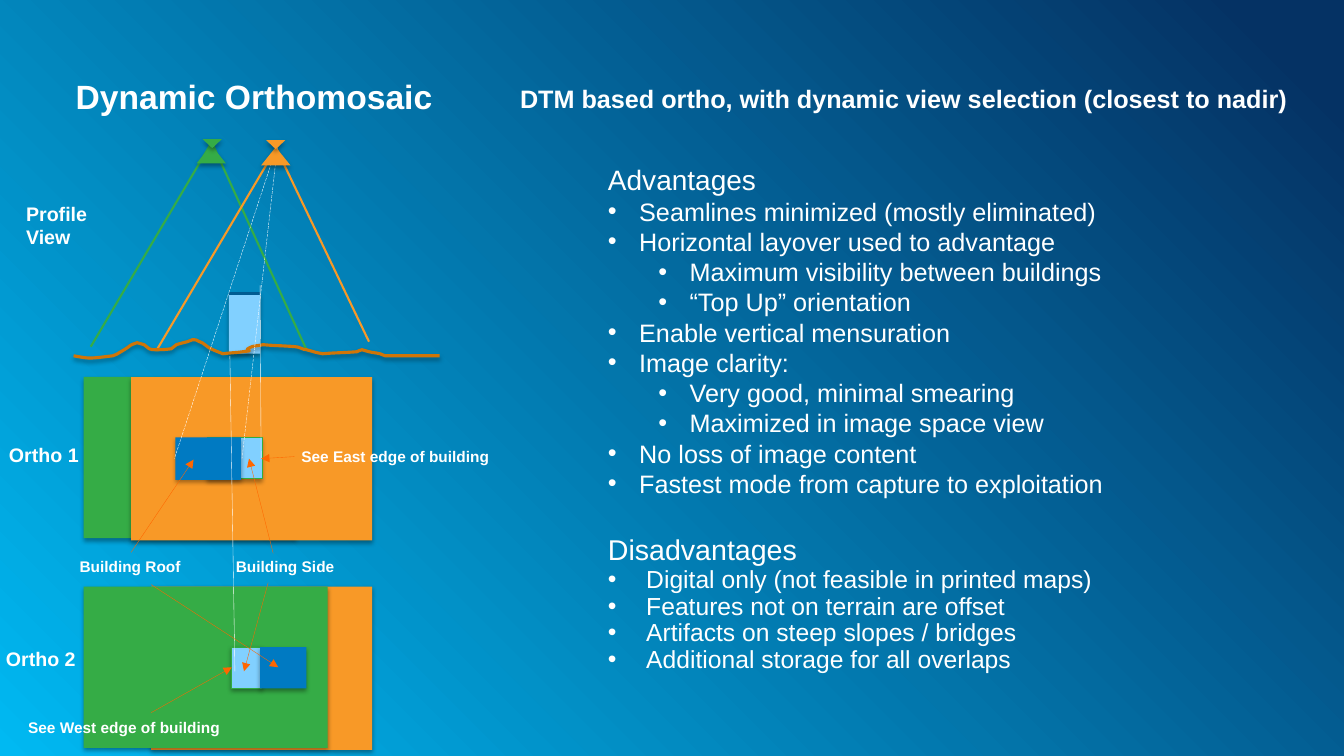
from pptx import Presentation
from pptx.dml.color import RGBColor
from pptx.enum.dml import MSO_LINE
from pptx.enum.shapes import MSO_CONNECTOR, MSO_SHAPE
from pptx.enum.text import MSO_ANCHOR, MSO_AUTO_SIZE as AUTO_SIZE, PP_ALIGN
from pptx.oxml import parse_xml
from pptx.oxml.ns import nsdecls, qn
from pptx.util import Inches, Pt

GREEN, ORANGE, WHITE = "35AC46", "F89927", "FFFFFF"
ROOF, WALL, WALL_EDGE = "007AC2", "81D0FF", "31AB42"
ROOF_EDGE, EARTH, POINTER = "005C92", "D07507", "FF6600"
NEAR_BG, FAR_BG = "00B9F2", "053264"
FONT = "Arial"

TITLE = "Dynamic Orthomosaic"
# text, left, top, width, height, size
LABELS = [
    ("DTM based ortho, with dynamic view selection (closest to nadir)", 5.06, 0.78, 8.07, 0.4, 18),
    ("Profile\nView", 0.16, 1.95, 0.81, 0.57, 14),
    ("Ortho 1", -0.01, 4.34, 0.9, 0.57, 14),
    ("Ortho 2", -0.04, 6.37, 0.9, 0.57, 14),
    ("Building Side", 2.24, 5.48, 1.19, 0.29, 11),
    ("Building Roof", 0.69, 5.48, 1.21, 0.29, 11),
    ("See East edge of building", 2.89, 4.39, 2.08, 0.29, 11),
    ("See West edge of building", 0.18, 7.07, 2.12, 0.29, 11),
]
# level, text
ADVANTAGES = [
    (0, "Seamlines minimized (mostly eliminated)"),
    (0, "Horizontal layover used to advantage"),
    (1, "Maximum visibility between buildings"),
    (1, "“Top Up” orientation"),
    (0, "Enable vertical mensuration"),
    (0, "Image clarity:"),
    (1, "Very good, minimal smearing"),
    (1, "Maximized in image space view"),
    (0, "No loss of image content"),
    (0, "Fastest mode from capture to exploitation"),
]
DISADVANTAGES = [
    (0, "Digital only (not feasible in printed maps)"),
    (0, "Features not on terrain are offset"),
    (0, "Artifacts on steep slopes / bridges"),
    (0, "Additional storage for all overlaps"),
]
# left, top, width, height, fill, outline
PLATES = [
    (1.5, 5.82, 2.19, 1.62, ORANGE, None),
    (0.83, 3.74, 2.11, 1.6, GREEN, None),
    (1.3, 3.74, 2.39, 1.62, ORANGE, None),
    (2.27, 2.91, 0.31, 0.6, WALL, None),
    (2.06, 4.34, 0.54, 0.41, WALL, WALL_EDGE),
    (1.74, 4.34, 0.65, 0.42, ROOF, None),
    (0.83, 5.82, 2.42, 1.6, GREEN, None),
    (2.3, 6.42, 0.29, 0.41, WALL, WALL_EDGE),
    (2.58, 6.42, 0.46, 0.41, ROOF, None),
]
# start x, start y, end x, end y
VIEW_RAYS = [
    (GREEN, (2.09, 1.43, 0.9, 3.44)),
    (GREEN, (2.09, 1.39, 3.04, 3.47)),
    (ORANGE, (2.74, 1.47, 1.55, 3.48)),
    (ORANGE, (2.74, 1.47, 3.66, 3.39)),
]
ROOF_LINE = (2.27, 2.91, 2.58, 2.91)
PLUMB_LINES = [(2.58, 2.83, 2.59, 4.55), (2.28, 3.53, 2.33, 6.66)]
LAYOVER_LINES = [(2.75, 1.47, 2.4, 4.55), (2.74, 1.47, 1.73, 4.55)]
POINTERS = [
    (2.71, 5.49, 2.47, 4.55), (1.3, 5.48, 1.92, 4.56),
    (2.66, 5.78, 2.42, 6.66), (1.5, 5.8, 2.76, 6.62),
    (2.92, 4.53, 2.59, 4.55), (1.5, 7.07, 2.3, 6.62),
]
# left, top, width, height, rotation, fill
CAMERA_PARTS = [
    (1.95, 1.44, 0.29, 0.18, 0, GREEN), (2.01, 1.38, 0.19, 0.09, 180, GREEN),
    (2.59, 1.46, 0.29, 0.18, 0, ORANGE), (2.64, 1.39, 0.19, 0.09, 180, ORANGE),
]
# Bezier segments: two control points and an end point; a lone end point is a straight line
TERRAIN_START = (0.73, 3.53)
TERRAIN = [
    (0.9, 3.56, 0.87, 3.56, 1.12, 3.53), (1.15, 3.52, 1.17, 3.51, 1.2, 3.49),
    (1.35, 3.4, 1.25, 3.44, 1.36, 3.4), (1.38, 3.41, 1.41, 3.41, 1.43, 3.42),
    (1.45, 3.43, 1.46, 3.45, 1.48, 3.46), (1.5, 3.47, 1.52, 3.47, 1.54, 3.47),
    (1.59, 3.47, 1.64, 3.47, 1.7, 3.46), (1.72, 3.45, 1.73, 3.43, 1.75, 3.42),
    (1.78, 3.41, 1.82, 3.4, 1.86, 3.39), (1.91, 3.37),
    (1.93, 3.37, 1.96, 3.37, 1.98, 3.39), (2.02, 3.4, 2.05, 3.44, 2.09, 3.46),
    (2.18, 3.5, 2.14, 3.48, 2.21, 3.51), (2.28, 3.5, 2.35, 3.5, 2.41, 3.49),
    (2.57, 3.47, 2.37, 3.49, 2.5, 3.44), (2.53, 3.43, 2.57, 3.43, 2.61, 3.42),
    (2.71, 3.43, 2.82, 3.43, 2.93, 3.44), (2.97, 3.44, 3, 3.47, 3.04, 3.47),
    (3.15, 3.5, 3.1, 3.49, 3.2, 3.51), (3.31, 3.5, 3.42, 3.5, 3.54, 3.49),
    (3.55, 3.49, 3.57, 3.47, 3.59, 3.47), (3.61, 3.47, 3.64, 3.49, 3.66, 3.49),
    (3.7, 3.5, 3.73, 3.5, 3.77, 3.51), (3.79, 3.51, 3.8, 3.53, 3.82, 3.53),
    (4, 3.53, 4.18, 3.53, 4.36, 3.53),
]


def rgb(color):
    return RGBColor.from_string(color)


def add_shadow(shape):
    shape.shadow.inherit = False
    effects = shape._element.spPr.find(qn("a:effectLst"))
    effects.append(parse_xml(
        f'<a:outerShdw {nsdecls("a")} blurRad="40000" dist="23000" dir="5400000" rotWithShape="0">'
        '<a:srgbClr val="000000"><a:alpha val="35000"/></a:srgbClr></a:outerShdw>'))


def add_block(slide, kind, box, fill, outline=None, rotation=0):
    block = slide.shapes.add_shape(kind, *map(Inches, box))
    block.rotation = rotation
    block.fill.solid()
    block.fill.fore_color.rgb = rgb(fill)
    if outline:
        block.line.color.rgb = rgb(outline)
        block.line.width = Pt(0.75)
    else:
        block.line.fill.background()
    add_shadow(block)


def add_line(slide, ends, color, width, dashed=False, arrow=False):
    line = slide.shapes.add_connector(MSO_CONNECTOR.STRAIGHT, *map(Inches, ends))
    line.line.color.rgb = rgb(color)
    line.line.width = Pt(width)
    if dashed:
        line.line.dash_style = MSO_LINE.LONG_DASH
    if arrow:
        line.line._get_or_add_ln().append(parse_xml(f'<a:tailEnd {nsdecls("a")} type="triangle"/>'))
    line._element.spPr.append(parse_xml(f'<a:effectLst {nsdecls("a")}/>'))


def add_terrain(slide):
    """Draw straight segments between the end points, then bend them into Bezier curves."""
    builder = slide.shapes.build_freeform(*map(Inches, TERRAIN_START))
    builder.add_line_segments([tuple(map(Inches, segment[-2:])) for segment in TERRAIN], close=False)
    terrain = builder.convert_to_shape()
    straights = list(terrain._element.iter(qn("a:lnTo")))
    for straight, segment in zip(straights, TERRAIN):
        if len(segment) == 2:
            continue
        points = "".join(
            f'<a:pt x="{Inches(x) - terrain.left}" y="{Inches(y) - terrain.top}"/>'
            for x, y in zip(segment[::2], segment[1::2]))
        curve = parse_xml(f'<a:cubicBezTo {nsdecls("a")}>{points}</a:cubicBezTo>')
        straight.getparent().replace(straight, curve)
    terrain.fill.background()
    terrain.line.color.rgb = rgb(EARTH)
    terrain.line.width = Pt(2.25)
    add_shadow(terrain)


def add_run(paragraph, text, size, bold=False):
    run = paragraph.add_run()
    run.text = text
    run.font.name, run.font.size, run.font.bold = FONT, Pt(size), bold
    run.font.color.rgb = rgb(WHITE)


def clear_margins(frame):
    frame.margin_left = frame.margin_right = frame.margin_top = frame.margin_bottom = 0


def add_label(slide, text, left, top, width, height, size):
    frame = slide.shapes.add_textbox(*map(Inches, (left, top, width, height))).text_frame
    frame.word_wrap = False
    frame.auto_size = AUTO_SIZE.SHAPE_TO_FIT_TEXT
    for i, line in enumerate(text.split("\n")):
        add_run(frame.add_paragraph() if i else frame.paragraphs[0], line, size, bold=True)


def add_points(slide, box, heading, points, sizes, indent, spacing, wrap):
    frame = slide.shapes.add_textbox(*map(Inches, box)).text_frame
    frame.word_wrap = wrap
    clear_margins(frame)
    frame.paragraphs[0].line_spacing = spacing
    add_run(frame.paragraphs[0], heading, sizes[0])
    for level, text in points:
        point = frame.add_paragraph()
        point.level = level
        point.line_spacing = spacing
        props = point._p.get_or_add_pPr()
        props.set("marL", str(Inches(indent + 0.5 * level)))
        props.set("indent", str(-Inches(indent)))
        props.append(parse_xml(f'<a:buFont {nsdecls("a")} typeface="{FONT}"/>'))
        props.append(parse_xml(f'<a:buChar {nsdecls("a")} char="•"/>'))
        add_run(point, text, sizes[1])


def set_background(slide):
    fill = slide.background.fill
    fill.gradient()
    for stop, color, position in zip(fill.gradient_stops, (NEAR_BG, FAR_BG), (0, 0.95)):
        stop.color.rgb = rgb(color)
        stop.position = position
    linear = slide.element.find(".//" + qn("a:lin"))
    linear.getparent().replace(linear, parse_xml(
        f'<a:path {nsdecls("a")} path="circle"><a:fillToRect t="100000" r="100000"/></a:path>'))


def main():
    deck = Presentation()
    deck.slide_width, deck.slide_height = Inches(13.33), Inches(7.5)
    slide = deck.slides.add_slide(deck.slide_layouts[5])
    set_background(slide)

    title = slide.shapes.title
    title.left, title.top, title.width, title.height = map(Inches, (0.75, 0.75, 11.84, 0.4))
    clear_margins(title.text_frame)
    title.text_frame.vertical_anchor = MSO_ANCHOR.TOP
    title.text_frame.auto_size = AUTO_SIZE.SHAPE_TO_FIT_TEXT
    heading = title.text_frame.paragraphs[0]
    heading.alignment = PP_ALIGN.LEFT
    add_run(heading, TITLE, 24, bold=True)

    for *box, fill, outline in PLATES:
        add_block(slide, MSO_SHAPE.RECTANGLE, box, fill, outline)
    for color, ends in VIEW_RAYS:
        add_line(slide, ends, color, 1.5)
    add_terrain(slide)
    add_line(slide, ROOF_LINE, ROOF_EDGE, 2.25)
    for ends in PLUMB_LINES:
        add_line(slide, ends, WHITE, 0.25)
    for ends in LAYOVER_LINES:
        add_line(slide, ends, WHITE, 0.25, dashed=True)
    for ends in POINTERS:
        add_line(slide, ends, POINTER, 0.25, arrow=True)
    for *box, rotation, fill in CAMERA_PARTS:
        add_block(slide, MSO_SHAPE.ISOSCELES_TRIANGLE, box, fill, rotation=rotation)

    for label in LABELS:
        add_label(slide, *label)
    add_points(slide, (6.03, 1.61, 5.35, 3.65), "Advantages", ADVANTAGES, (20, 18), 0.31, 1.0, False)
    add_points(slide, (6.03, 5.32, 6.14, 1.52), "Disadvantages", DISADVANTAGES, (20.4, 17.6), 0.38, 0.9, True)
    deck.save("out.pptx")


if __name__ == "__main__":
    main()
